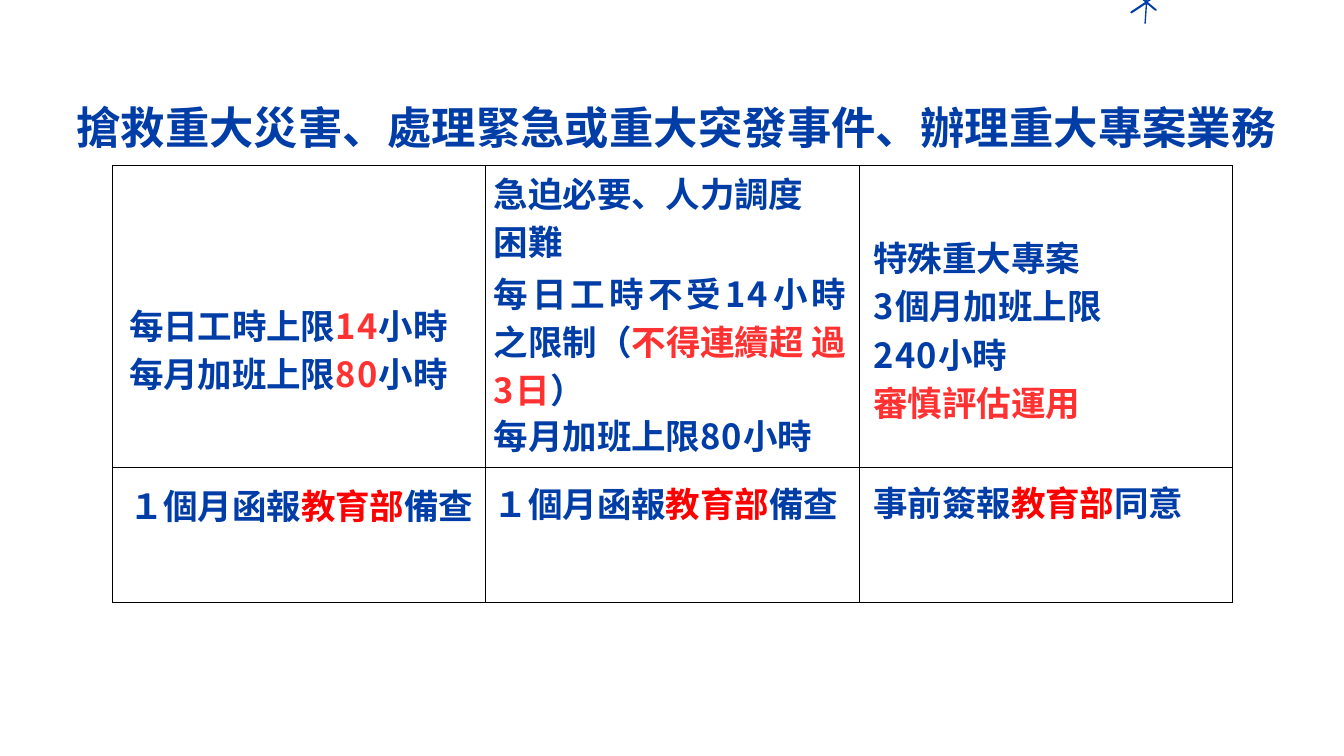
from itertools import groupby

from lxml.etree import SubElement
from pptx import Presentation
from pptx.dml.color import RGBColor
from pptx.enum.text import MSO_ANCHOR, PP_ALIGN as Align
from pptx.oxml import parse_xml
from pptx.oxml.ns import nsdecls, qn
from pptx.util import Inches, Pt

BLUE = RGBColor(0x00, 0x3D, 0xA7)
CORAL = RGBColor(0xFF, 0x31, 0x31)
RED = RGBColor(0xFF, 0x00, 0x00)
FONT = "Noto Sans CJK SC"
DIGITS = "0123456789"

# Star outline in hundredths of an inch, clockwise from the top edge
STAR = [
    (1700, 0), (1704, 0), (1705, 1), (1705, 0), (1707, 0), (1707, 1),
    (1709, 0), (1713, 0), (1708, 3), (1721, 14), (1721, 16), (1719, 16),
    (1707, 6), (1705, 35), (1703, 35), (1705, 6), (1684, 20), (1682, 19),
    (1683, 17), (1704, 3),
]

# Each line: runs, line height, space before, alignment
LEFT = [
    ([("每日工時上限", BLUE), ("14", CORAL), ("小時", BLUE)], 37, 0, None),
    ([("每月加班上限", BLUE), ("80", CORAL), ("小時", BLUE)], 44.4, 7.3, None),
    ([("１個月函報", BLUE), ("教育部", RED), ("備查", BLUE)], 44.4, 96.6, None),
]
MIDDLE = [
    ([("急迫必要、人力調度", BLUE)], 37, 0, None),
    ([("困難", BLUE)], 44.4, 7.3, None),
    ([("每日工時不受14小時 之限制（", BLUE), ("不得連續超 過3日", CORAL),
      ("）", BLUE)], 51.8, 2.9, Align.JUSTIFY),
    ([("每月加班上限80小時", BLUE)], 44.4, 4.3, None),
    ([("１個月函報", BLUE), ("教育部", RED), ("備查", BLUE)], 44.4, 29, None),
]
RIGHT = [
    ([("特殊重大專案", BLUE)], 37, 0, None),
    ([("3個月加班上限", BLUE)], 44.4, 7.3, None),
    ([("240小時", BLUE)], 44.4, 7.3, None),
    ([("審慎評估運用", CORAL)], 44.4, 7.3, None),
    ([("事前簽報", BLUE), ("教育部", RED), ("同意", BLUE)], 44.4, 62.6, None),
]


class Deck:
    def __init__(self, wide, high):
        self.prs = Presentation()
        self.prs.slide_width = Inches(wide)
        self.prs.slide_height = Inches(high)
        self.slide = self.prs.slides.add_slide(self.prs.slide_layouts[6])

    def style(self, run, size, color, gap):
        """Set the look of a run; gap is letter spacing in points."""
        font = run.font
        font.size, font.bold = Pt(size), True
        font.color.rgb = color
        font.name = FONT
        props = run._r.get_or_add_rPr()
        props.set("spc", str(round(gap * 100)))
        SubElement(props, qn("a:ea")).set("typeface", FONT)

    def frame(self, *place):
        box = self.slide.shapes.add_textbox(*map(Inches, place))
        frame = box.text_frame
        frame.word_wrap = True
        frame.margin_left = frame.margin_right = 0
        frame.margin_top = frame.margin_bottom = 0
        return frame

    def title(self, text, *place):
        frame = self.frame(*place)
        frame.margin_top = Inches(0.02)
        frame.vertical_anchor = MSO_ANCHOR.MIDDLE
        frame.text = text
        para = frame.paragraphs[0]
        para.alignment = Align.CENTER
        self.style(para.runs[0], 47.5, BLUE, 0.1)

    def text(self, lines, *place):
        frame = self.frame(*place)
        for i, (parts, height, before, align) in enumerate(lines):
            para = frame.add_paragraph() if i else frame.paragraphs[0]
            para.line_spacing = Pt(height)
            if before:
                para.space_before = Pt(before)
            para.alignment = align
            for words, color in parts:
                # Digits are set wider than the characters around them
                for digit, group in groupby(words, lambda c: c in DIGITS):
                    run = para.add_run()
                    run.text = "".join(group)
                    self.style(run, 37, color, 1.4 if digit else -0.1)

    def star(self, points):
        build = self.slide.shapes.build_freeform(*points[0], scale=Inches(0.01))
        build.add_line_segments(points[1:], close=True)
        shape = build.convert_to_shape()
        shape.shadow.inherit = False
        shape.fill.solid()
        shape.fill.fore_color.rgb = BLUE
        shape.line.fill.background()

    def grid(self, rows, cols, *place):
        """Add an empty ruled table with the given row heights."""
        frame = self.slide.shapes.add_table(len(rows), cols, *map(Inches, place))
        table = frame.table
        table.first_row = table.horz_banding = False
        for row, high in zip(table.rows, rows):
            row.height = Inches(high)
        for cell in table.iter_cells():
            cell.fill.background()
            props = cell._tc.get_or_add_tcPr()
            for i, side in enumerate("LRTB"):
                props.insert(i, parse_xml(
                    f'<a:ln{side} {nsdecls("a")} w="12700"><a:solidFill>'
                    f'<a:srgbClr val="000000"/></a:solidFill></a:ln{side}>'))


def main():
    deck = Deck(20, 11.25)
    deck.text(LEFT, 1.92, 4.64, 5.17, 3.2)
    deck.text(MIDDLE, 7.35, 2.68, 5.24, 5.18)
    deck.text(RIGHT, 13, 3.63, 5.07, 4.17)
    deck.star(STAR)
    deck.title("搶救重大災害、處理緊急或重大突發事件、辦理重大專案業務",
               1.11, 1.46, 17.91, 0.82)
    deck.grid([4.5, 2.01], 3, 1.67, 2.46, 16.67, 6.51)
    deck.prs.save("out.pptx")


if __name__ == "__main__":
    main()
